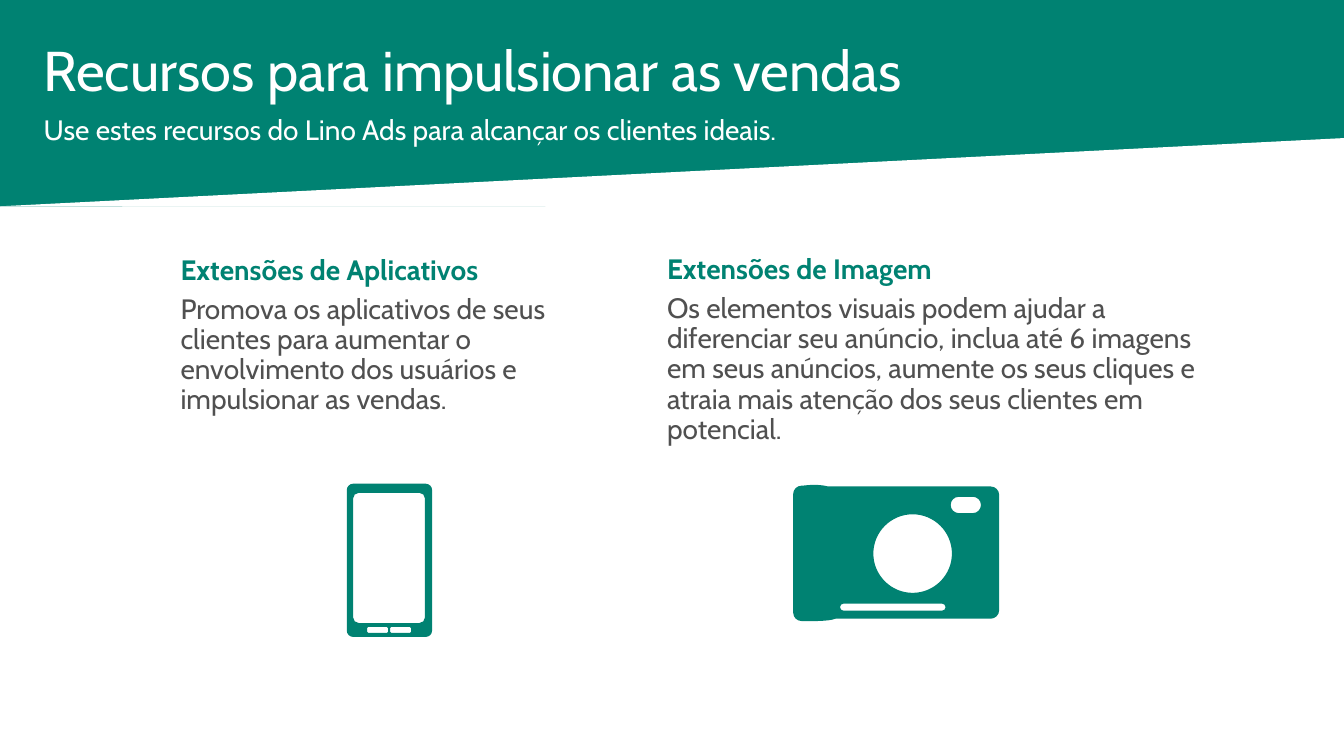
from pptx import Presentation
from pptx.dml.color import RGBColor
from pptx.enum.shapes import MSO_SHAPE as SHAPE
from pptx.oxml.ns import qn
from pptx.util import Cm, Pt

COLORS = {"green": "008272", "white": "FFFFFF", "gray": "505050"}
FONT = "Cabin"
WIDTH, HEIGHT = 33.87, 19.05
BAND_HEIGHT, SLOPE_TOP = 5.2, 3.48
ARC = 0.55  # length of a curve handle for a quarter circle of radius 1
COLUMNS = [
    ((4.55, 6.46, 11.3, 3.94), "Extensões de Aplicativos",
     "Promova os aplicativos de seus clientes para aumentar o envolvimento "
     "dos usuários e impulsionar as vendas."),
    ((16.81, 6.44, 14.05, 2.06), "Extensões de Imagem",
     "Os elementos visuais podem ajudar a diferenciar seu anúncio, inclua até "
     "6 imagens em seus anúncios, aumente os seus cliques e atraia mais "
     "atenção dos seus clientes em potencial."),
]


def paint(sp, color):
    sp.shadow.inherit = False
    sp.fill.solid()
    sp.fill.fore_color.rgb = RGBColor.from_string(COLORS[color])
    sp.line.fill.background()


def add_text(s, box, lines, space_after=0):
    """Add a text box; each line is (text, size, color, bold)."""
    tf = s.shapes.add_textbox(*map(Cm, box)).text_frame
    tf.word_wrap = True
    tf.margin_left = tf.margin_top = tf.margin_right = tf.margin_bottom = 0
    for i, (text, size, color, bold) in enumerate(lines):
        p = tf.add_paragraph() if i else tf.paragraphs[0]
        p.text = text
        p.line_spacing = 0.9
        p.space_after = Pt(space_after)
        font = p.runs[0].font
        font.name, font.size, font.bold = FONT, Pt(size), bold
        font.color.rgb = RGBColor.from_string(COLORS[color])


def corner(cx, cy, radius, quarter):
    """A line to a quarter circle, then its curve; quarter 0 is bottom right."""
    ux, uy = [(1, 0), (0, 1), (-1, 0), (0, -1)][quarter]
    vx, vy = -uy, ux
    start, c1, c2, end = [
        (cx + radius * (a * ux + b * vx), cy + radius * (a * uy + b * vy))
        for a, b in [(1, 0), (1, ARC), (ARC, 1), (0, 1)]]
    return [(start,), (c1, c2, end)]


def rounded(left, top, right, bottom, radius):
    x1, y1, x2, y2 = left + radius, top + radius, right - radius, bottom - radius
    centers = [(x2, y2), (x1, y2), (x1, y1), (x2, y1)]
    return [seg for q, (cx, cy) in enumerate(centers)
            for seg in corner(cx, cy, radius, q)]


def add_outline(s, *contours):
    """Draw contours of one-point lines and three-point curves as one shape."""
    builder = s.shapes.build_freeform(*map(Cm, contours[0][0][0]))
    for i, ((start,), *segments) in enumerate(contours):
        if i:
            builder.move_to(*map(Cm, start))
        builder.add_line_segments(
            [(Cm(x), Cm(y)) for seg in segments for x, y in seg], close=True)
    sp = builder.convert_to_shape()
    lines = iter(list(sp._element.iter(qn("a:lnTo"))))
    for seg in [seg for contour in contours for seg in contour[1:]]:
        curve, *handles = [next(lines) for _ in seg]
        if handles:
            curve.tag = qn("a:cubicBezTo")
        for line in handles:
            curve.append(line[0])
            line.getparent().remove(line)
    paint(sp, "green")


def add_header(s):
    corners = [(0, 0), (WIDTH, 0), (WIDTH, BAND_HEIGHT - 0.02), (0, BAND_HEIGHT)]
    add_outline(s, [(pt,) for pt in corners])
    box = (0, SLOPE_TOP, WIDTH, BAND_HEIGHT - SLOPE_TOP)
    slope = s.shapes.add_shape(SHAPE.RIGHT_TRIANGLE, *map(Cm, box))
    paint(slope, "white")
    slope._element.spPr.xfrm.set("flipH", "1")
    add_text(s, (1.1, 1.09, 27, 1.4),
             [("Recursos para impulsionar as vendas", 40, "white", False)])
    add_text(s, (1.1, 2.92, 22.2, 1.47),
             [("Use estes recursos do Lino Ads para alcançar os clientes ideais.",
               20, "white", False)])


def add_phone(s):
    screen = rounded(8.9, 12.42, 10.71, 15.7, 0.14)
    buttons = [rounded(x, 15.8, x + 0.53, 15.95, 0.03) for x in (9.25, 9.83)]
    add_outline(s, rounded(8.74, 12.19, 10.89, 16.05, 0.16), screen, *buttons)


def add_camera(s):
    body = [*corner(24.97, 15.38, 0.21, 0),
            ((21.06, 15.59),),
            ((20.88, 15.67), (20.29, 15.65), (20.2, 15.65)),
            *corner(20.2, 15.44, 0.21, 1)[1:],
            *corner(20.2, 12.45, 0.21, 2),
            ((20.29, 12.24), (20.55, 12.18), (20.88, 12.26)),
            *corner(24.97, 12.47, 0.21, 3)]
    lens = rounded(22.01, 12.96, 23.99, 14.94, 0.99)
    flash = rounded(23.96, 12.52, 24.72, 12.93, 0.2)
    bar = rounded(21.17, 15.21, 23.83, 15.39, 0.09)
    add_outline(s, body, lens, flash, bar)


def main():
    prs = Presentation()
    prs.slide_width, prs.slide_height = Cm(WIDTH), Cm(HEIGHT)
    s = prs.slides.add_slide(prs.slide_layouts[6])
    add_header(s)
    for box, heading, body in COLUMNS:
        add_text(s, box, [(heading, 20, "green", True),
                          (body, 20, "gray", False)], space_after=6)
    add_phone(s)
    add_camera(s)
    prs.save("out.pptx")


if __name__ == "__main__":
    main()
